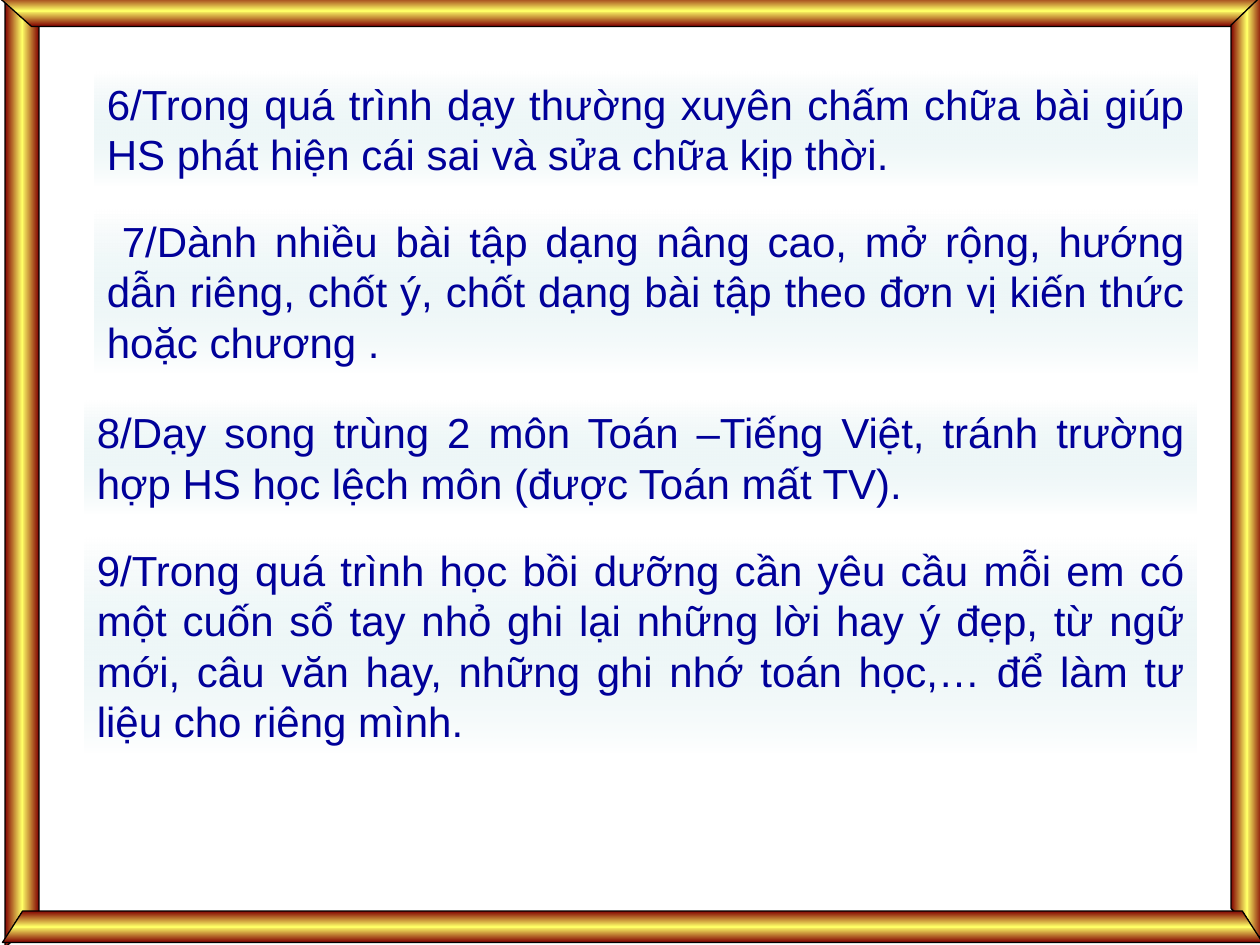
from pptx import Presentation
from pptx.dml.color import RGBColor
from pptx.enum.shapes import MSO_SHAPE
from pptx.enum.text import MSO_ANCHOR, MSO_AUTO_SIZE, PP_ALIGN
from pptx.oxml import parse_xml
from pptx.oxml.ns import nsdecls, qn
from pptx.util import Inches, Pt

THEME = {
    "font": "Arial", "size": 24, "lead_size": 18,
    "text": "000099", "outline": "000000", "outline_width": 0.75,
    # Gradient stops: position %, colour, opacity %
    "gold": [(0, "800000", 100), (50, "FFFF66", 100), (100, "800000", 100)],
    "mist": [(0, "FFFFFF", 100), (100, "BBE0E3", 0)],
}
WIDTH, HEIGHT = 10, 7.5
RIGHT = 9.5

# Left edge, top, height, text
ITEMS = [
    (0.75, 0.57, 0.9, "6/Trong quá trình dạy thường xuyên chấm chữa bài giúp HS phát hiện "
                      "cái sai và sửa chữa kịp thời."),
    (0.75, 1.66, 1.3, " 7/Dành nhiều bài tập dạng nâng cao, mở rộng, hướng dẫn riêng, chốt ý, "
                      "chốt dạng bài tập theo đơn vị kiến thức hoặc chương ."),
    (0.67, 3.18, 0.9, "8/Dạy song trùng 2 môn Toán –Tiếng Việt, tránh trường hợp HS học lệch "
                      "môn (được Toán mất TV)."),
    (0.67, 4.27, 1.7, "9/Trong quá trình học bồi dưỡng cần yêu cầu mỗi em có một cuốn sổ tay "
                      "nhỏ ghi lại những lời hay ý đẹp, từ ngữ mới, câu văn hay, những ghi nhớ "
                      "toán học,… để làm tư liệu cho riêng mình."),
]

# Gradient angle and mitred corners of each frame bar, in hundredths of an inch
FRAME = [
    (0, [(4, 752), (4, -4), (31, 19), (31, 728)]),
    (90, [(-3, -4), (1006, -4), (977, 21), (25, 21)]),
    (180, [(1002, -4), (1002, 746), (977, 721), (977, 20)]),
    (270, [(1002, 748), (2, 748), (18, 723), (986, 723)]),
]


def set_gradient(shape, stops, angle):
    shape.shadow.inherit = False
    shape.fill.gradient()
    stop_xml = "".join(
        f'<a:gs pos="{position * 1000}"><a:srgbClr val="{colour}">'
        f'<a:alpha val="{opacity * 1000}"/></a:srgbClr></a:gs>'
        for position, colour, opacity in stops)
    gradient = parse_xml(
        f'<a:gradFill {nsdecls("a")} rotWithShape="1"><a:gsLst>{stop_xml}</a:gsLst>'
        f'<a:lin ang="{angle * 60000}" scaled="1"/></a:gradFill>')
    properties = shape.element.spPr
    properties.replace(properties.find(qn("a:gradFill")), gradient)


def add_bar(slide, angle, corners):
    builder = slide.shapes.build_freeform(*corners[0], scale=Inches(0.01))
    builder.add_line_segments(corners[1:], close=True)
    bar = builder.convert_to_shape()
    set_gradient(bar, THEME["gold"], angle)
    bar.line.color.rgb = RGBColor.from_string(THEME["outline"])
    bar.line.width = Pt(THEME["outline_width"])


def add_run(paragraph, text, size):
    run = paragraph.add_run()
    run.text = text
    run.font.name = THEME["font"]
    run.font.size = Pt(size)
    run.font.color.rgb = RGBColor.from_string(THEME["text"])


def add_item(slide, left, top, height, text):
    box = slide.shapes.add_shape(
        MSO_SHAPE.RECTANGLE, *map(Inches, (left, top, RIGHT - left, height)))
    set_gradient(box, THEME["mist"], 90)
    box.line.fill.background()
    frame_format = {"word_wrap": True, "vertical_anchor": MSO_ANCHOR.MIDDLE,
                    "auto_size": MSO_AUTO_SIZE.SHAPE_TO_FIT_TEXT}
    for name, value in frame_format.items():
        setattr(box.text_frame, name, value)
    paragraph = box.text_frame.paragraphs[0]
    paragraph.alignment = PP_ALIGN.JUSTIFY
    if text.startswith(" "):
        add_run(paragraph, " ", THEME["lead_size"])
    add_run(paragraph, text.lstrip(), THEME["size"])


def main():
    presentation = Presentation()
    presentation.slide_width = Inches(WIDTH)
    presentation.slide_height = Inches(HEIGHT)
    slide = presentation.slides.add_slide(presentation.slide_layouts[6])
    for bar in FRAME:
        add_bar(slide, *bar)
    for item in ITEMS:
        add_item(slide, *item)
    presentation.save("out.pptx")


if __name__ == "__main__":
    main()
